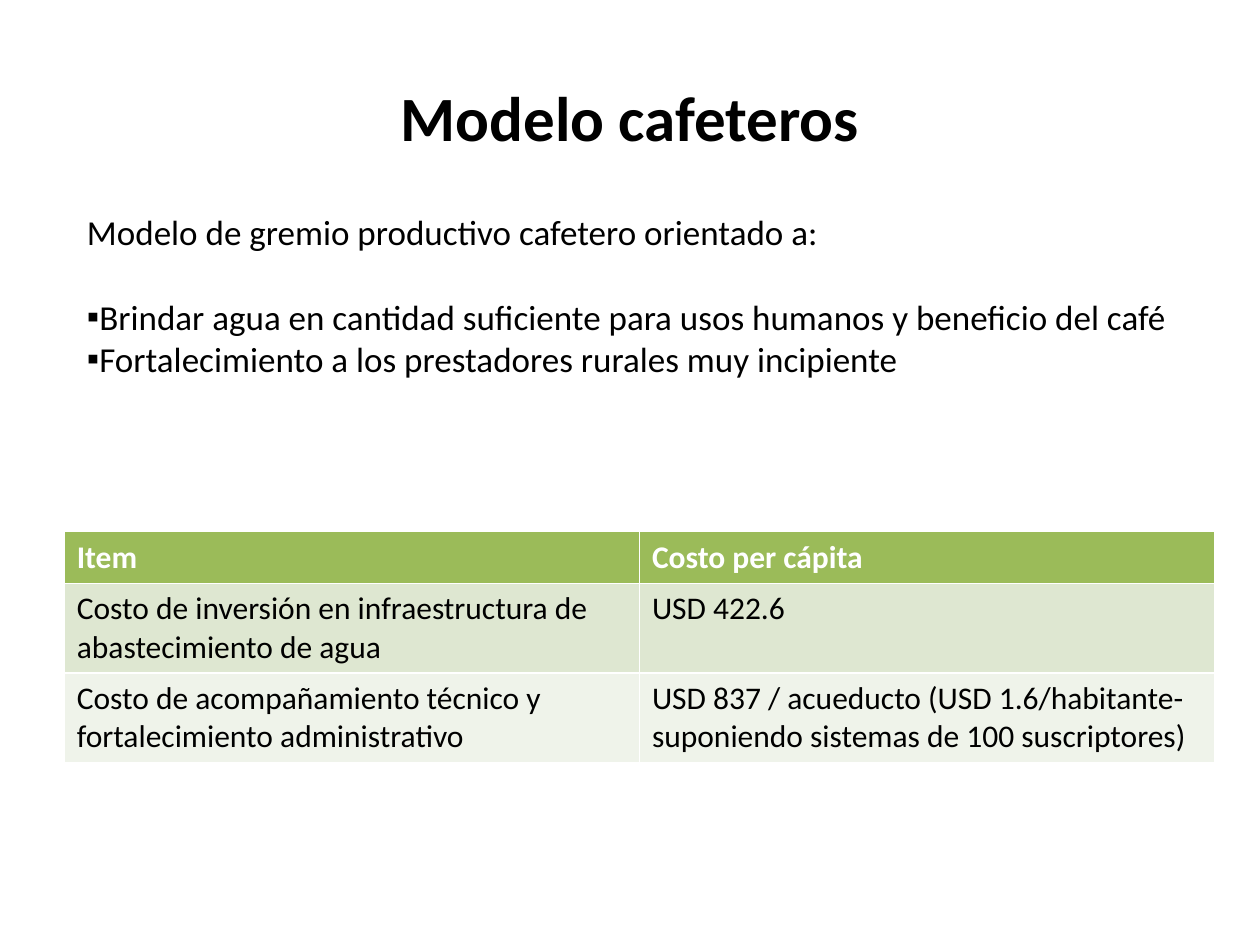
from lxml.etree import SubElement
from pptx import Presentation
from pptx.dml.color import RGBColor
from pptx.enum.text import MSO_ANCHOR, PP_ALIGN
from pptx.oxml.ns import qn
from pptx.util import Inches, Pt

COLORS = {"ink": "000000", "header_text": "FFFFFF", "header": "9BBB59",
          "odd_row": "DEE7D1", "even_row": "EFF3EA"}
FONT = "Calibri"
HEADING = "Modelo cafeteros"
GOALS = [
    "Modelo de gremio productivo cafetero orientado a:",
    "Brindar agua en cantidad suficiente para usos humanos y beneficio del café",
    "Fortalecimiento a los prestadores rurales muy incipiente",
]
COSTS = [
    ("Item", "Costo per cápita"),
    ("Costo de inversión en infraestructura de abastecimiento de agua", "USD 422.6"),
    ("Costo de acompañamiento técnico y fortalecimiento administrativo",
     "USD 837 / acueducto (USD 1.6/habitante-suponiendo sistemas de 100 suscriptores)"),
]
ROW_HEIGHTS = (0.41, 0.7, 0.7)


def place(placeholder, box):
    """Move a placeholder to a box given in inches."""
    placeholder.left, placeholder.top, placeholder.width, placeholder.height = map(Inches, box)


def style(paragraph, size, color="ink", bold=False):
    """Format every run of a paragraph."""
    for run in paragraph.runs:
        run.font.name = FONT
        run.font.size = Pt(size)
        run.font.bold = bold
        run.font.color.rgb = RGBColor.from_string(COLORS[color])


def set_bullet(paragraph, mark=None):
    """Start a paragraph at the margin, with a bullet mark or none."""
    properties = paragraph._p.get_or_add_pPr()
    properties.set("marL", "0")
    properties.set("indent", "0")
    if mark:
        SubElement(properties, qn("a:buFont")).set("typeface", "Arial")
        SubElement(properties, qn("a:buChar")).set("char", mark)
    else:
        SubElement(properties, qn("a:buNone"))


def add_heading(slide, box):
    """Fill the title placeholder."""
    heading = slide.shapes.title
    place(heading, box)
    heading.text_frame.text = HEADING
    heading.text_frame.vertical_anchor = MSO_ANCHOR.MIDDLE
    heading.text_frame.paragraphs[0].alignment = PP_ALIGN.CENTER
    style(heading.text_frame.paragraphs[0], 36, bold=True)


def add_goals(slide, box):
    """Fill the body placeholder with the lead-in and its bulleted goals."""
    goals = slide.placeholders[1]
    place(goals, box)
    goals.text_frame.text = "\n".join(GOALS)
    for index, paragraph in enumerate(goals.text_frame.paragraphs):
        paragraph.space_before = Pt(24.4 if index == 1 else 0)
        set_bullet(paragraph, "▪" if index else None)
        style(paragraph, 20)


def add_costs(slide, box):
    """Add the cost table with a header and banded rows."""
    costs = slide.shapes.add_table(len(COSTS), len(COSTS[0]), *map(Inches, box)).table
    for row, (height, texts) in enumerate(zip(ROW_HEIGHTS, COSTS)):
        costs.rows[row].height = Inches(height)
        band = ("even_row", "odd_row")[row % 2] if row else "header"
        for column, text in enumerate(texts):
            cell = costs.cell(row, column)
            cell.text_frame.text = text
            cell.fill.solid()
            cell.fill.fore_color.rgb = RGBColor.from_string(COLORS[band])
            style(cell.text_frame.paragraphs[0], 18,
                  "ink" if row else "header_text", bold=row == 0)


def main():
    """Build the slide and save it."""
    deck = Presentation()
    deck.slide_width, deck.slide_height = Inches(10), Inches(7.5)
    slide = deck.slides.add_slide(deck.slide_layouts[1])
    add_heading(slide, (0.5, 0.3, 9, 1.25))
    add_costs(slide, (0.51, 4.22, 9.13, sum(ROW_HEIGHTS)))
    add_goals(slide, (0.59, 1.62, 8.98, 1.45))
    deck.save("out.pptx")


if __name__ == "__main__":
    main()
